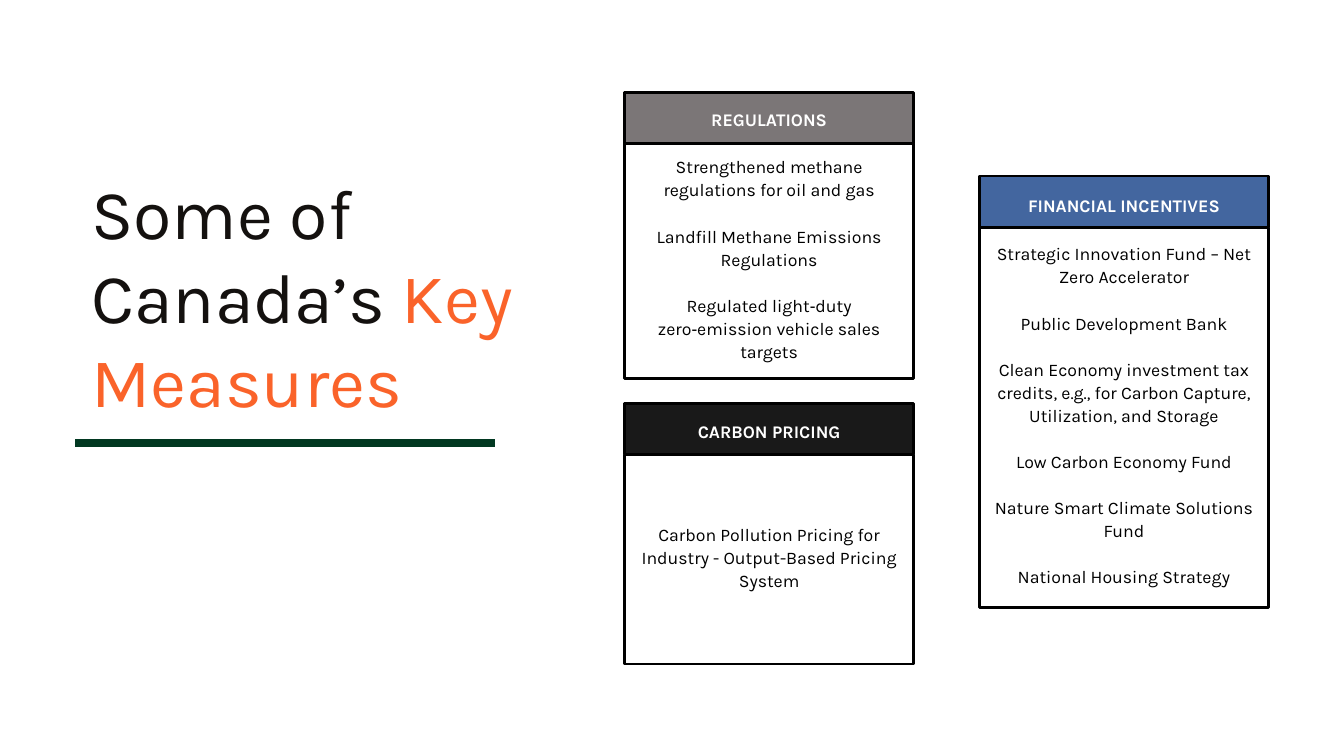
from pptx import Presentation
from pptx.dml.color import RGBColor
from pptx.enum.shapes import MSO_CONNECTOR, MSO_SHAPE
from pptx.enum.text import MSO_ANCHOR, MSO_AUTO_SIZE, PP_ALIGN
from pptx.oxml.ns import qn
from pptx.util import Inches, Pt
from lxml import etree

RECT = MSO_SHAPE.RECTANGLE
STRAIGHT = MSO_CONNECTOR.STRAIGHT
TOP, MIDDLE = MSO_ANCHOR.TOP, MSO_ANCHOR.MIDDLE
LEFT, CENTER = PP_ALIGN.LEFT, PP_ALIGN.CENTER
FIXED = MSO_AUTO_SIZE.NONE

FONT = "Karla"
PITCH = Pt(24.7)
CARD_W, HEAD_H = 4.31, 0.76
COL_A, COL_B = 9.29, 14.57

# left, top, body height, downward nudge of the heading, colour, heading, items
CARDS = [
    (COL_A, 1.38, 3.49, 0, "7B7677", "REGULATIONS", [
        "Strengthened methane regulations for oil and gas",
        "Landfill Methane Emissions Regulations",
        "Regulated light‑duty zero‑emission vehicle sales targets",
    ]),
    (COL_B, 2.62, 5.66, 0.08, "43669F", "FINANCIAL INCENTIVES", [
        "Strategic Innovation Fund – Net Zero Accelerator",
        "Public Development Bank",
        "Clean Economy investment tax credits, e.g., for Carbon Capture, "
        "Utilization, and Storage",
        "Low Carbon Economy Fund",
        "Nature Smart Climate Solutions Fund",
        "National Housing Strategy",
    ]),
    (COL_A, 6.01, 3.11, 0.04, "191919", "CARBON PRICING", [
        "Carbon Pollution Pricing for Industry - Output-Based Pricing System",
    ]),
]


def color(code):
    return RGBColor.from_string(code)


def style(obj, **values):
    for name, value in values.items():
        setattr(obj, name, value)


def add_run(para, text, size, code, bold=False):
    run = para.add_run()
    run.text = text
    style(run.font, name=FONT, size=Pt(size), bold=bold)
    run.font.color.rgb = color(code)


def add_panel(slide, box, fill, ink, items, bold=False, above=0, below=0):
    """Outlined box of centred items, one blank line's height apart."""
    shape = slide.shapes.add_shape(RECT, *map(Inches, box))
    shape.shadow.inherit = False
    shape.fill.solid()
    shape.fill.fore_color.rgb = color(fill)
    shape.line.color.rgb = color("000000")
    shape.line.width = Pt(3)
    frame = shape.text_frame
    style(frame, word_wrap=True, vertical_anchor=MIDDLE,
          margin_left=Inches(0.06), margin_right=Inches(0.06),
          margin_top=Inches(above), margin_bottom=Inches(below))
    for i, item in enumerate(items):
        para = frame.paragraphs[0] if i == 0 else frame.add_paragraph()
        style(para, alignment=CENTER, line_spacing=PITCH,
              space_before=PITCH if i else Pt(0))
        add_run(para, item, 19, ink, bold)


def add_card(slide, left, top, height, nudge, fill, heading, items):
    body = (left, top + HEAD_H, CARD_W, height)
    add_panel(slide, body, "FFFFFF", "000000", items, above=0.06, below=0.15)
    head = (left, top, CARD_W, HEAD_H)
    add_panel(slide, head, fill, "FFFFFF", [heading], bold=True, above=nudge)


def add_title(slide, left, top, width, height):
    title = slide.shapes.title
    style(title, left=Inches(left), top=Inches(top),
          width=Inches(width), height=Inches(height))
    frame = title.text_frame
    style(frame, word_wrap=True, auto_size=FIXED, vertical_anchor=TOP,
          margin_left=0, margin_right=0, margin_top=0, margin_bottom=0)
    para = frame.paragraphs[0]
    style(para, alignment=LEFT, line_spacing=Pt(90), space_before=Pt(0))
    add_run(para, "Some of Canada’s ", 75, "14110F")
    add_run(para, "Key Measures", 75, "FA632A")


def add_rule(slide, left, top, width):
    ends = map(Inches, (left, top, left + width, top))
    rule = slide.shapes.add_connector(STRAIGHT, *ends)
    rule.line.color.rgb = color("013821")
    rule.line.width = Pt(8.25)
    props = rule._element.find(qn("p:spPr"))
    etree.SubElement(props, qn("a:effectLst"))


def main():
    deck = Presentation()
    style(deck, slide_width=Inches(20), slide_height=Inches(11.25))
    slide = deck.slides.add_slide(deck.slide_layouts[5])
    add_title(slide, 1.36, 2.52, 6.57, 3.77)
    add_rule(slide, 1.12, 6.59, 6.24)
    for card in CARDS:
        add_card(slide, *card)
    deck.save("out.pptx")


if __name__ == "__main__":
    main()
